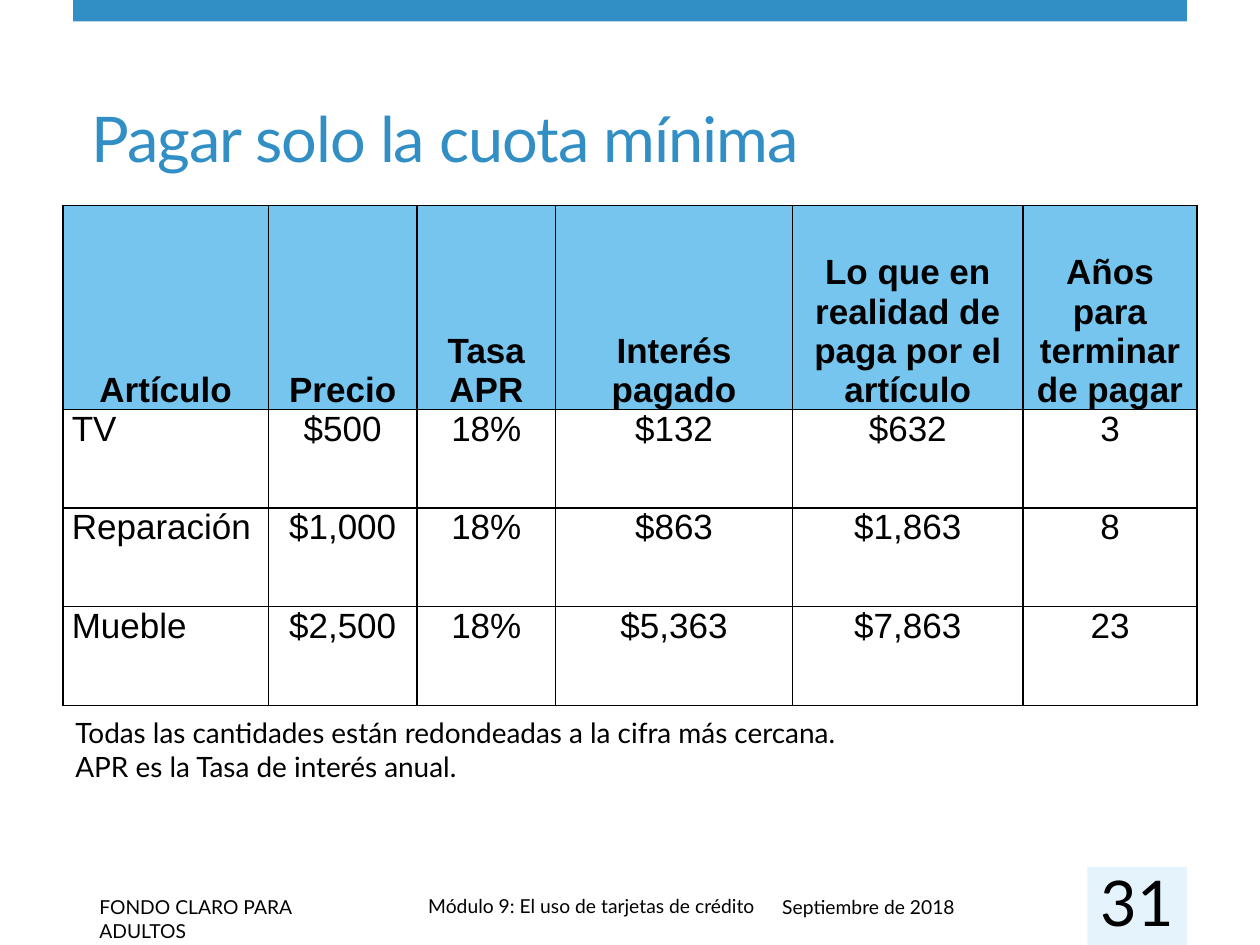
"""Build the slide about the cost of paying only the minimum instalment."""
from typing import NamedTuple

from lxml.etree import SubElement
from pptx import Presentation
from pptx.dml.color import RGBColor
from pptx.enum.shapes import MSO_SHAPE as Preset
from pptx.enum.text import MSO_ANCHOR as Anchor, MSO_AUTO_SIZE as AutoSize, PP_ALIGN as Align
from pptx.oxml.ns import qn
from pptx.util import Inches, Pt

SLIDE_WIDTH, SLIDE_HEIGHT = Inches(10), Inches(7.5)
COLUMN, ROW = SLIDE_WIDTH / 100, SLIDE_HEIGHT / 75

BLUE = RGBColor(0x31, 0x8F, 0xC5)
SKY = RGBColor(0x76, 0xC5, 0xEF)
PALE = RGBColor(0xE4, 0xF3, 0xFC)
BLACK = RGBColor(0, 0, 0)
HEADING_FONT, TABLE_FONT = "Lato", "Arial"


class Area(NamedTuple):
    """A rectangle in grid columns and rows."""
    left: float
    top: float
    width: float
    height: float

    def lengths(self) -> tuple[int, int, int, int]:
        """Return the rectangle in slide units."""
        return (int(self.left * COLUMN), int(self.top * ROW),
                int(self.width * COLUMN), int(self.height * ROW))


class Bar(NamedTuple):
    """A plain coloured rectangle."""
    area: Area
    color: RGBColor


class Label(NamedTuple):
    """A text box with one font size."""
    text: str
    area: Area
    size: int
    centered: bool = False


BARS = (
    Bar(Area(5.8, 0, 88.4, 1.7), BLUE),
    Bar(Area(86.3, 68.8, 7.9, 6.2), PALE),
)
TITLE = Label("Pagar solo la cuota mínima", Area(6.3, 4.8, 82, 9.6), 36)
LABELS = (
    Label("Módulo 9: El uso de tarjetas de crédito", Area(33, 70.5, 50.4, 2.9), 11),
    Label("FONDO CLARO PARA ADULTOS", Area(6.9, 70.6, 22.3, 2.9), 11),
    Label("Septiembre de 2018", Area(61.1, 70.6, 25.2, 2.9), 11),
    Label("Todas las cantidades están redondeadas a la cifra más cercana.\n"
          "APR es la Tasa de interés anual.", Area(5, 56.3, 87.4, 6.4), 16),
    Label("31", Area(86.3, 69.6, 7.9, 3.8), 36, centered=True),
)
TABLE_AREA = Area(5, 16.3, 90, 39.7)
COLUMN_WIDTHS = (16.3, 11.8, 11, 18.8, 18.3, 13.8)
ROW_HEIGHTS = (16.2, 7.83, 7.83, 7.83)
COSTS = (
    ("Artículo", "Precio", "Tasa APR", "Interés pagado",
     "Lo que en realidad de paga por el artículo", "Años para terminar de pagar"),
    ("TV", "$500", "18%", "$132", "$632", "3"),
    ("Reparación", "$1,000", "18%", "$863", "$1,863", "8"),
    ("Mueble", "$2,500", "18%", "$5,363", "$7,863", "23"),
)


def format_runs(paragraph, font_name: str, size: int, color: RGBColor, bold: bool = False) -> None:
    """Give every run of a paragraph the same font."""
    for run in paragraph.runs:
        run.font.name, run.font.size, run.font.bold = font_name, Pt(size), bold
        run.font.color.rgb = color


def draw_bar(slide, bar: Bar) -> None:
    """Draw a filled rectangle without outline."""
    shape = slide.shapes.add_shape(Preset.RECTANGLE, *bar.area.lengths())
    shape.shadow.inherit = False
    shape.fill.solid()
    shape.fill.fore_color.rgb = bar.color
    shape.line.fill.background()


def draw_label(slide, label: Label) -> None:
    """Draw a wrapped text box."""
    frame = slide.shapes.add_textbox(*label.area.lengths()).text_frame
    frame.word_wrap = True
    frame.text = label.text
    if label.centered:
        frame.vertical_anchor = Anchor.MIDDLE
        frame.margin_left = frame.margin_right = frame.margin_top = frame.margin_bottom = 0
    for paragraph in frame.paragraphs:
        paragraph.alignment = Align.CENTER if label.centered else Align.LEFT
        format_runs(paragraph, HEADING_FONT, label.size, BLACK)


def place_title(slide, label: Label) -> None:
    """Move and format the title placeholder."""
    title = slide.shapes.title
    title.left, title.top, title.width, title.height = label.area.lengths()
    frame = title.text_frame
    frame.text = label.text
    frame.auto_size = AutoSize.NONE
    frame.vertical_anchor = Anchor.BOTTOM
    paragraph = frame.paragraphs[0]
    paragraph.alignment = Align.LEFT
    format_runs(paragraph, HEADING_FONT, label.size, BLUE)
    paragraph.runs[0].font._element.set("spc", "-60")


def add_borders(cell) -> None:
    """Outline a cell with thin black lines."""
    properties = cell._tc.get_or_add_tcPr()
    for position, side in enumerate(("a:lnL", "a:lnR", "a:lnT", "a:lnB")):
        line = SubElement(properties, qn(side), w=str(Pt(1)))
        fill = SubElement(line, qn("a:solidFill"))
        SubElement(fill, qn("a:srgbClr"), val=str(BLACK))
        properties.insert(position, line)


def fill_cell(cell, text: str, header: bool, centered: bool) -> None:
    """Write and format one table cell."""
    cell.text = text
    cell.margin_left = cell.margin_right = Inches(0.07)
    cell.margin_top = cell.margin_bottom = 0
    cell.vertical_anchor = Anchor.BOTTOM if header else Anchor.TOP
    paragraph = cell.text_frame.paragraphs[0]
    paragraph.alignment = Align.CENTER if centered else Align.LEFT
    paragraph.space_after = Pt(12)
    format_runs(paragraph, TABLE_FONT, 20, BLACK, bold=header)
    if header:
        cell.fill.solid()
        cell.fill.fore_color.rgb = SKY
    else:
        cell.fill.background()
    add_borders(cell)


def draw_cost_table(slide) -> None:
    """Draw the table of items and what they finally cost."""
    frame = slide.shapes.add_table(len(COSTS), len(COLUMN_WIDTHS), *TABLE_AREA.lengths())
    table = frame.table
    table.horz_banding = False
    for column, width in zip(table.columns, COLUMN_WIDTHS):
        column.width = int(width * COLUMN)
    for row, height in zip(table.rows, ROW_HEIGHTS):
        row.height = int(height * ROW)
    for row_index, values in enumerate(COSTS):
        header = row_index == 0
        for column_index, text in enumerate(values):
            fill_cell(table.cell(row_index, column_index), text, header,
                      centered=header or column_index > 0)


def main() -> None:
    """Create and save the presentation."""
    presentation = Presentation()
    presentation.slide_width, presentation.slide_height = SLIDE_WIDTH, SLIDE_HEIGHT
    slide = presentation.slides.add_slide(presentation.slide_layouts[5])
    for bar in BARS:
        draw_bar(slide, bar)
    place_title(slide, TITLE)
    draw_cost_table(slide)
    for label in LABELS:
        draw_label(slide, label)
    presentation.save("out.pptx")


if __name__ == "__main__":
    main()
